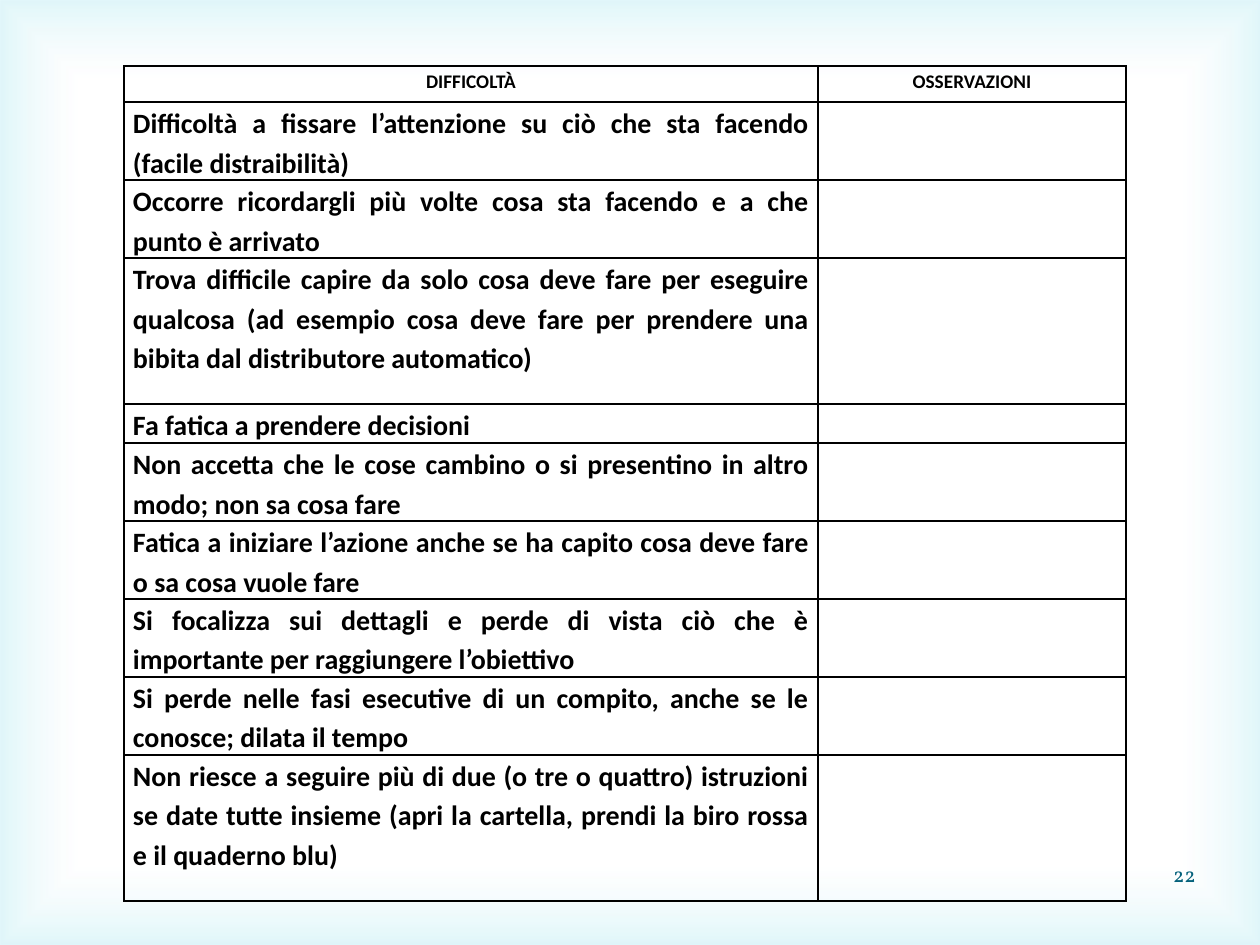
import pptx
import pptx.util
import pptx.oxml
import pptx.oxml.ns
import pptx.dml.color
import pptx.enum.shapes
import pptx.enum.text

PX = 914400 / 126
BLACK = pptx.dml.color.RGBColor(0x00, 0x00, 0x00)
TEAL = pptx.dml.color.RGBColor(0x04, 0x61, 0x7B)
ALIGN = pptx.enum.text.PP_ALIGN
HEADERS = ["DIFFICOLTÀ", "OSSERVAZIONI"]
COLUMNS = [694, 308]
HEADER_HEIGHT = 36
ROWS = [
    ("Difficoltà a fissare l’attenzione su ciò che sta facendo (facile distraibilità)", 78),
    ("Occorre ricordargli più volte cosa sta facendo e a che punto è arrivato", 78),
    ("Trova difficile capire da solo cosa deve fare per eseguire qualcosa "
     "(ad esempio cosa deve fare per prendere una bibita dal distributore automatico)", 146),
    ("Fa fatica a prendere decisioni", 39),
    ("Non accetta che le cose cambino o si presentino in altro modo; non sa cosa fare", 78),
    ("Fatica a iniziare l’azione anche se ha capito cosa deve fare o sa cosa vuole fare", 78),
    ("Si focalizza sui dettagli e perde di vista ciò che è importante "
     "per raggiungere l’obiettivo", 78),
    ("Si perde nelle fasi esecutive di un compito, anche se le conosce; dilata il tempo", 78),
    ("Non riesce a seguire più di due (o tre o quattro) istruzioni se date tutte insieme "
     "(apri la cartella, prendi la biro rossa e il quaderno blu)", 146),
]
NS = pptx.oxml.ns.nsdecls("a")
GLOW = (
    f'<a:gradFill {NS} rotWithShape="1"><a:gsLst>'
    '<a:gs pos="83000"><a:srgbClr val="FFFFFF"><a:alpha val="11000"/></a:srgbClr></a:gs>'
    '<a:gs pos="100000"><a:srgbClr val="77D9E8"><a:alpha val="23000"/></a:srgbClr></a:gs>'
    '</a:gsLst><a:path path="rect"><a:fillToRect l="50000" t="50000" r="50000" b="50000"/>'
    '</a:path></a:gradFill>'
)


def px(n):
    """Turn px into EMU."""
    return pptx.util.Emu(round(n * PX))


def add_glow(s, x, y, w, h):
    """Fill the box with a soft glow along its edges."""
    sp = s.shapes.add_shape(pptx.enum.shapes.MSO_SHAPE.RECTANGLE, px(x), px(y), px(w), px(h))
    sp.shadow.inherit = False
    sp.line.fill.background()
    sp.fill.background()
    no_fill = sp.element.spPr.find(pptx.oxml.ns.qn("a:noFill"))
    sp.element.spPr.replace(no_fill, pptx.oxml.parse_xml(GLOW))


def style_paragraph(p, text, size, font, color, align):
    """Write a paragraph with its font and alignment."""
    p.text = text
    p.alignment = align
    p.font.size = pptx.util.Pt(size)
    p.font.name = font
    p.font.color.rgb = color


def add_page_number(s, x, y, w, h):
    """Place the page number at the right of the box."""
    tf = s.shapes.add_textbox(px(x), px(y), px(w), px(h)).text_frame
    tf.word_wrap = True
    tf.vertical_anchor = pptx.enum.text.MSO_ANCHOR.MIDDLE
    style_paragraph(tf.paragraphs[0], "22", 12, "Vollkorn", TEAL, ALIGN.RIGHT)


def style_cell(cell):
    """Clear the fill, set the margins and draw the four borders."""
    cell.fill.background()
    cell.margin_left = cell.margin_right = px(9)
    cell.margin_top = cell.margin_bottom = 0
    tc_pr = cell._tc.get_or_add_tcPr()
    for i, side in enumerate(("lnL", "lnR", "lnT", "lnB")):
        tc_pr.insert(i, pptx.oxml.parse_xml(
            f'<a:{side} {NS} w="12700"><a:solidFill><a:srgbClr val="{BLACK}"/>'
            f'</a:solidFill></a:{side}>'))


def write_cell(cell, text, size, align):
    """Write bold table text."""
    p = cell.text_frame.paragraphs[0]
    style_paragraph(p, text, size, "Calibri", BLACK, align)
    p.font.bold = True
    p.line_spacing = 1.15


def add_difficulty_table(s, x, y):
    """Place the table of difficulties with an empty column for remarks."""
    heights = [HEADER_HEIGHT] + [h for _, h in ROWS]
    table = s.shapes.add_table(len(heights), len(COLUMNS), px(x), px(y),
                               px(sum(COLUMNS)), px(sum(heights))).table
    table.first_row = table.horz_banding = False
    for column, width in zip(table.columns, COLUMNS):
        column.width = px(width)
    for row, height in zip(table.rows, heights):
        row.height = px(height)
    for cell in table.iter_cells():
        style_cell(cell)
    for j, text in enumerate(HEADERS):
        write_cell(table.cell(0, j), text, 11, ALIGN.CENTER)
    for i, (text, _) in enumerate(ROWS, 1):
        write_cell(table.cell(i, 0), text, 16, ALIGN.JUSTIFY)


def main():
    """Build the slide and save it."""
    prs = pptx.Presentation()
    prs.slide_width, prs.slide_height = px(1260), px(945)
    s = prs.slides.add_slide(prs.slide_layouts[6])
    add_glow(s, 0, 0, 1260, 945)
    add_page_number(s, 915, 849, 293, 50)
    add_difficulty_table(s, 124, 66)
    prs.save("out.pptx")


if __name__ == "__main__":
    main()
